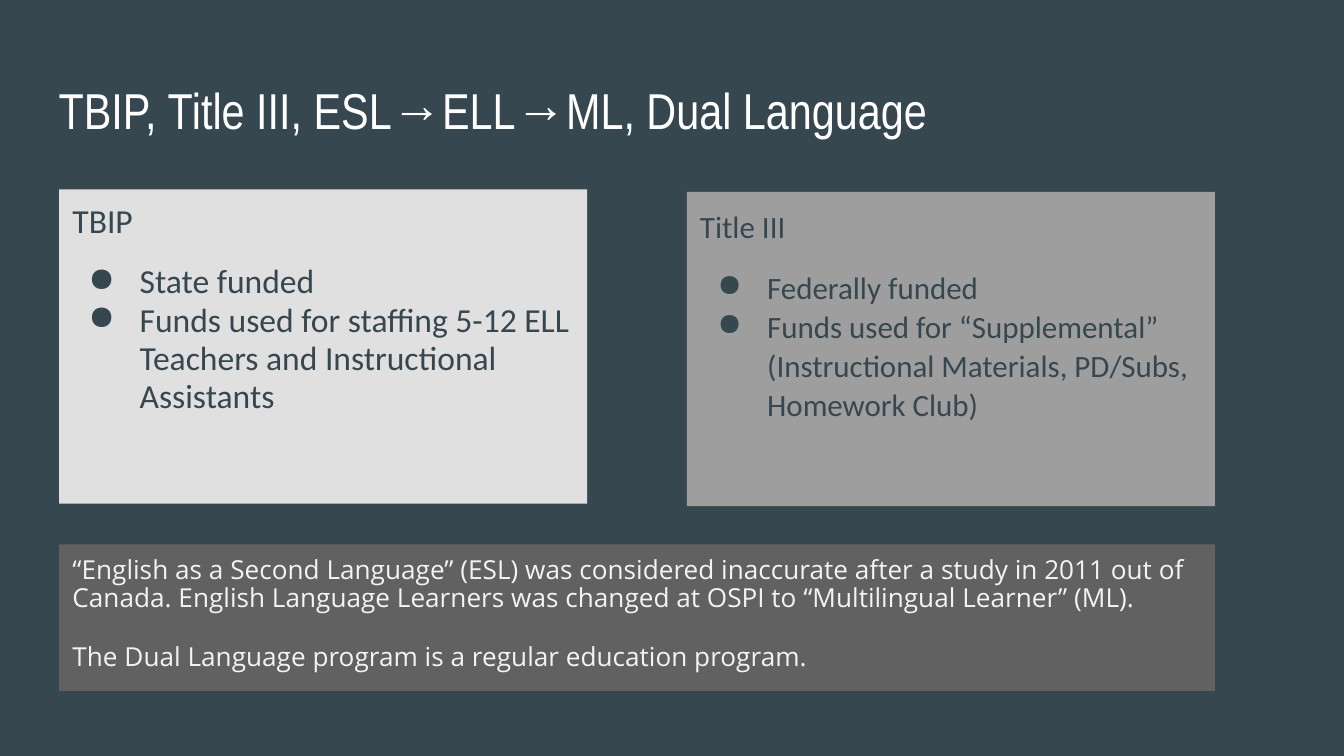
from lxml.etree import SubElement
from pptx import Presentation
from pptx.dml.color import RGBColor
from pptx.enum.shapes import MSO_SHAPE as Shape
from pptx.enum.text import MSO_ANCHOR as Anchor, PP_ALIGN as Align
from pptx.oxml.ns import qn
from pptx.util import Cm, Pt

SLATE = "37474F"
LEFT = 1.12


def paint(color_format, color):
    color_format.rgb = RGBColor.from_string(color)


def write(shape, lines, *, font, size, color, spacing=1.0, gap=0, hanging=None):
    """Fill the shape with lines; gap precedes the second, hanging bullets all but the first."""
    frame = shape.text_frame
    frame.word_wrap = True
    frame.vertical_anchor = Anchor.TOP
    frame.margin_left = frame.margin_right = Cm(0.25)
    frame.margin_top = frame.margin_bottom = Cm(0.25)
    for index, line in enumerate(lines):
        paragraph = frame.add_paragraph() if index else frame.paragraphs[0]
        paragraph.alignment = Align.LEFT
        paragraph.line_spacing = spacing
        paragraph.space_before = Pt(gap if index == 1 else 0)
        run = paragraph.add_run()
        run.text = line
        run.font.name = font
        run.font.size = Pt(size)
        paint(run.font.color, color)
        if hanging and index:
            properties = paragraph._p.get_or_add_pPr()
            properties.set("marL", str(Cm(1.27)))
            properties.set("indent", str(-Cm(hanging)))
            bullet_color = SubElement(properties, qn("a:buClr"))
            SubElement(bullet_color, qn("a:srgbClr"), val=color)
            SubElement(properties, qn("a:buChar"), char="●")


deck = Presentation()
deck.slide_width, deck.slide_height = Cm(25.4), Cm(14.29)
slide = deck.slides.add_slide(deck.slide_layouts[6])
slide.background.fill.solid()
paint(slide.background.fill.fore_color, SLATE)

title = slide.shapes.add_textbox(Cm(0.86), Cm(1.24), Cm(23.67), Cm(1.6))
write(title, ["TBIP, Title III, ESL→ELL→ML, Dual Language"],
      font="Arial Narrow", size=27, color="FFFFFF")

tbip = ["TBIP", "State funded",
        "Funds used for staffing 5-12 ELL Teachers and Instructional Assistants"]
title_iii = ["Title III", "Federally funded",
             "Funds used for “Supplemental” (Instructional Materials, PD/Subs, Homework Club)"]
terminology = [
    "“English as a Second Language” (ESL) was considered inaccurate after a study in 2011 "
    "out of Canada. English Language Learners was changed at OSPI to “Multilingual Learner” (ML).",
    "The Dual Language program is a regular education program.",
]

program = dict(font="Calibri", color=SLATE, gap=12)
panels = [
    ((LEFT, 3.58, 9.98, 5.94), "E0E0E0", tbip,
     dict(program, size=18, spacing=0.95, hanging=0.97)),
    ((12.98, 3.63, 9.98, 5.94), "9E9E9E", title_iii,
     dict(program, size=16.6, spacing=1.05, hanging=0.94)),
    ((LEFT, 10.29, 21.84, 2.77), "616161", terminology,
     dict(font="Open Sans", size=14, color="F3F3F3", spacing=0.88, gap=16.8)),
]
for box, fill, lines, style in panels:
    panel = slide.shapes.add_shape(Shape.RECTANGLE, *map(Cm, box))
    panel.shadow.inherit = False
    panel.fill.solid()
    paint(panel.fill.fore_color, fill)
    panel.line.fill.background()
    write(panel, lines, **style)

deck.save("out.pptx")
